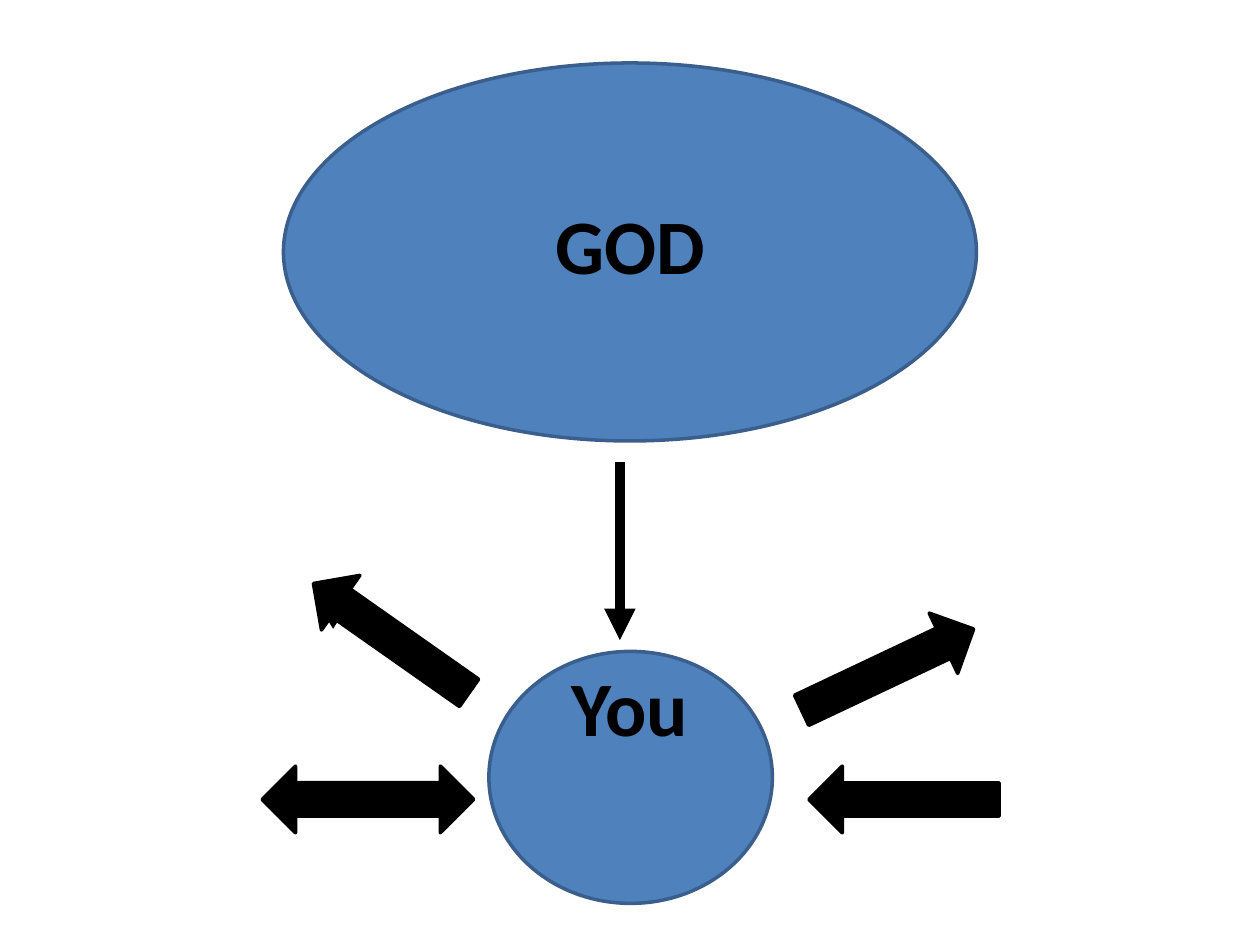
from lxml import etree
from pptx import Presentation
from pptx.dml.color import RGBColor
from pptx.enum.shapes import MSO_CONNECTOR as CONNECTOR, MSO_SHAPE as SHAPE
from pptx.enum.text import MSO_ANCHOR as ANCHOR, MSO_AUTO_SIZE as AUTO_SIZE, PP_ALIGN as ALIGN
from pptx.oxml.ns import qn
from pptx.util import Inches, Pt

BLACK, BLUE, DARK_BLUE, WHITE = "000000", "4F81BD", "3A5F8C", "FFFFFF"
ARROW_WIDTH, ARROW_HEIGHT = 1.51, 0.53


def color(hex_code):
    return RGBColor.from_string(hex_code)


def add_text(paragraph, text, font="Calibri", size=44, bold=True, fill=BLACK, space_before=0):
    paragraph.alignment = ALIGN.CENTER
    paragraph.space_before = Pt(space_before)
    run = paragraph.add_run()
    run.text = text
    run.font.name, run.font.size, run.font.bold = font, Pt(size), bold
    run.font.color.rgb = color(fill)


def add_solid(slide, preset, box, fill, line, rotation=0):
    shape = slide.shapes.add_shape(preset, *map(Inches, box))
    shape.shadow.inherit = False
    shape.fill.solid()
    shape.fill.fore_color.rgb = color(fill)
    shape.line.color.rgb = color(line)
    shape.line.width = Pt(2)
    shape.rotation = rotation


def add_arrow_line(slide, start, end, both_ends=False):
    connector = slide.shapes.add_connector(CONNECTOR.STRAIGHT, *map(Inches, start + end))
    connector.line.color.rgb = color(BLACK)
    connector.line.width = Pt(6)
    line = connector.line._get_or_add_ln()
    for tag in ("a:headEnd", "a:tailEnd") if both_ends else ("a:tailEnd",):
        etree.SubElement(line, qn(tag), type="triangle")
    etree.SubElement(connector.element.spPr, qn("a:effectLst"))


def add_title(slide, box):
    title = slide.shapes.title
    title.left, title.top, title.width, title.height = map(Inches, box)
    frame = title.text_frame
    frame.auto_size = AUTO_SIZE.NONE
    frame.word_wrap = True
    frame.vertical_anchor = ANCHOR.MIDDLE
    add_text(frame.paragraphs[0], "GOD")
    add_text(frame.add_paragraph(), "You", space_before=211)
    # Bring the words in front of the ellipses
    title.element.getparent().append(title.element)


def add_block_arrow(slide, left, top, rotation=0):
    box = (left, top, ARROW_WIDTH, ARROW_HEIGHT)
    add_solid(slide, SHAPE.RIGHT_ARROW, box, BLACK, BLACK, rotation)


def build_slide(presentation):
    slide = presentation.slides.add_slide(presentation.slide_layouts[5])
    slide.background.fill.solid()
    slide.background.fill.fore_color.rgb = color(WHITE)

    # Ellipses and their words
    for box in ((2.25, 0.5, 5.5, 3), (3.88, 5.17, 2.25, 2)):
        add_solid(slide, SHAPE.OVAL, box, BLUE, DARK_BLUE)
    add_title(slide, (0.5, 0.33, 9, 6.87))

    # Line arrows: down, left pair, upper right, lower right, upper left
    add_arrow_line(slide, (4.92, 3.67), (4.92, 5.08))
    add_arrow_line(slide, (2.17, 6.33), (3.58, 6.34), both_ends=True)
    add_arrow_line(slide, (6.42, 5.58), (7.66, 5))
    add_arrow_line(slide, (7.84, 6.34), (6.42, 6.33))
    add_arrow_line(slide, (3.67, 5.5), (2.5, 4.75))

    # Block arrows over the side lines
    for left, top, rotation in (
        (6.29, 5.05, 334.7),
        (2.25, 6.08, 0),
        (6.42, 6.08, 180),
        (2.35, 4.8, 215.1),
        (2.08, 6.08, 180),
    ):
        add_block_arrow(slide, left, top, rotation)


def main():
    presentation = Presentation()
    presentation.slide_width, presentation.slide_height = Inches(10), Inches(7.5)
    build_slide(presentation)
    presentation.save("out.pptx")


if __name__ == "__main__":
    main()
